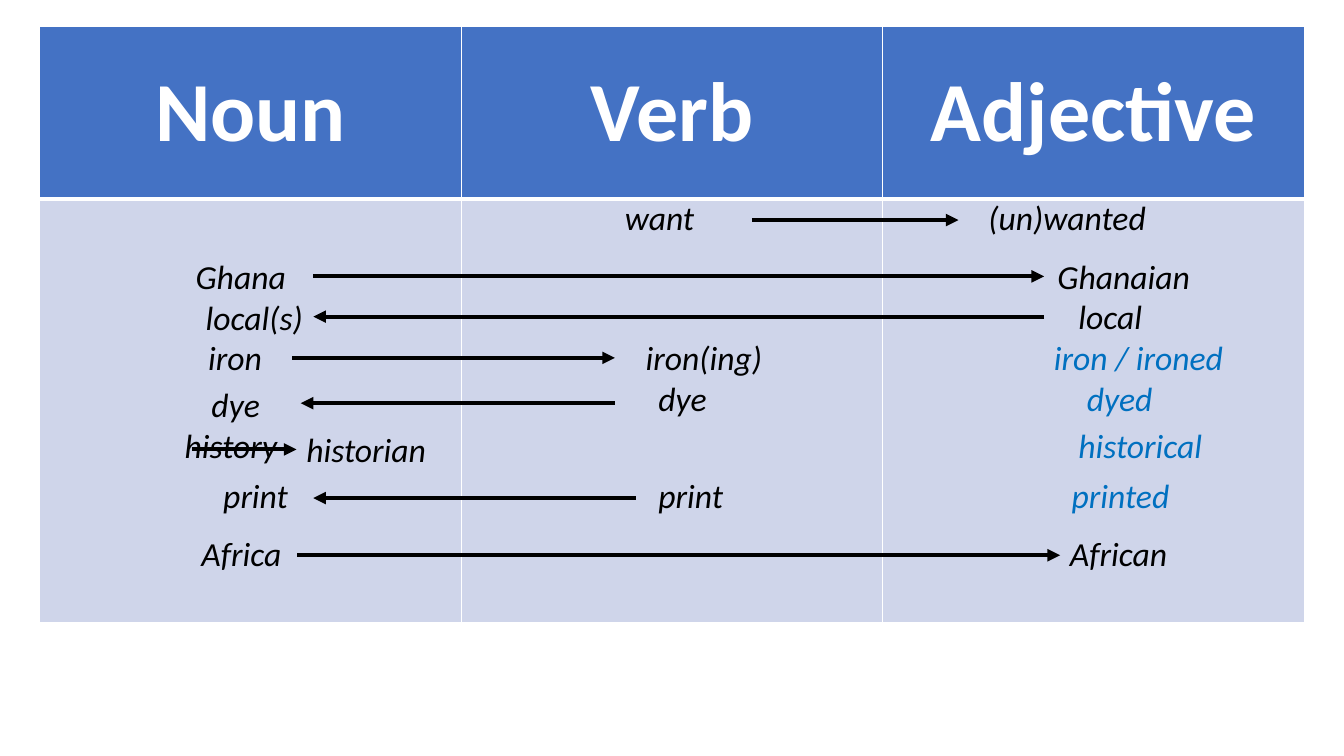
from lxml.etree import SubElement as Sub
from pptx import Presentation
from pptx.dml.color import RGBColor
from pptx.enum.shapes import MSO_CONNECTOR as Conn
from pptx.enum.text import MSO_ANCHOR as Anchor, MSO_AUTO_SIZE as Auto, PP_ALIGN as Align
from pptx.oxml.ns import qn
from pptx.util import Emu, Pt

BLACK = RGBColor(0x00, 0x00, 0x00)
WHITE = RGBColor(0xFF, 0xFF, 0xFF)
BLUE = RGBColor(0x44, 0x72, 0xC4)
PALE = RGBColor(0xCF, 0xD5, 0xEA)
AZURE = RGBColor(0x00, 0x70, 0xC0)

# The slide is a grid of 160 columns and 90 rows of square units
UNIT = 76200
COLS, ROWS = 160, 90
HIGH = 6
RIGHT, LEFT = 3, 1


def grid(*vals):
    return [Emu(round(val * UNIT)) for val in vals]


class Board:
    head = {"name": "Calibri", "size": Pt(60), "bold": True}
    word = {"name": "Calibri", "size": Pt(24), "italic": True}

    def __init__(self, deck):
        self.shapes = deck.slides.add_slide(deck.slide_layouts[6]).shapes

    def style(self, font, form, color):
        for key, val in form.items():
            setattr(font, key, val)
        font.color.rgb = color

    def edges(self, cell, base):
        props = cell._tc.get_or_add_tcPr()
        for side, wide in zip("LRTB", (1, 1, 1, base)):
            line = Sub(props, qn(f"a:ln{side}"), w=str(Pt(wide)))
            fill = Sub(line, qn("a:solidFill"))
            Sub(fill, qn("a:srgbClr"), val=str(WHITE))

    def table(self, heads, left, top, wide, highs):
        box = grid(left, top, wide * len(heads), sum(highs))
        table = self.shapes.add_table(len(highs), len(heads), *box).table
        for row, high in zip(table.rows, highs):
            row.height = grid(high)[0]
        for num, text in enumerate(heads):
            table.columns[num].width = grid(wide)[0]
            for row, (fill, base) in enumerate(((BLUE, 3), (PALE, 1))):
                cell = table.cell(row, num)
                self.edges(cell, base)
                cell.fill.solid()
                cell.fill.fore_color.rgb = fill
            cell = table.cell(0, num)
            cell.vertical_anchor = Anchor.MIDDLE
            para = cell.text_frame.paragraphs[0]
            para.alignment = Align.CENTER
            run = para.add_run()
            run.text = text
            self.style(run.font, self.head, WHITE)

    def label(self, text, left, top, wide, color=BLACK):
        box = self.shapes.add_textbox(*grid(left, top, wide, HIGH))
        frame = box.text_frame
        frame.word_wrap = False
        frame.auto_size = Auto.SHAPE_TO_FIT_TEXT
        run = frame.paragraphs[0].add_run()
        run.text = text
        self.style(run.font, self.word, color)
        return box

    def arrow(self, start, end, row, goal=None, side=None):
        link = self.shapes.add_connector(Conn.STRAIGHT, *grid(start, row, end, row))
        link.line.width = Pt(3)
        link.line.color.rgb = BLACK
        Sub(link.line._get_or_add_ln(), qn("a:tailEnd"), type="triangle")
        Sub(link._element.spPr, qn("a:effectLst"))
        if goal is not None:
            link.end_connect(goal, side)


def main():
    deck = Presentation()
    deck.slide_width, deck.slide_height = grid(COLS, ROWS)
    board = Board(deck)

    # Word classes
    board.table(("Noun", "Verb", "Adjective"), 4.7, 3.2, 50.2, (20.5, 50.4))

    # Words: text, left, top, width
    words = [
        ("want", 73.2, 22.9, 10.8),
        ("(un)wanted", 116.5, 22.9, 21.4),
        ("Ghana", 22.1, 29.9, 13.3),
        ("Ghanaian", 124.7, 29.9, 18.4),
        ("local(s)", 23.3, 34.7, 14),
        ("local", 127.2, 34.6, 10),
        ("iron", 23.6, 39.5, 9),
        ("iron(ing)", 75.7, 39.5, 16.3),
        ("dye", 77.2, 44.4, 8.4),
        ("dye", 24, 45.1, 8.4),
        ("history", 20.8, 50, 13.7),
        ("historian", 35.3, 50.5, 16.8),
        ("print", 25.4, 55.9, 10.3),
        ("print", 77.2, 55.9, 10.3),
        ("Africa", 22.8, 62.8, 12),
        ("African", 126.2, 62.8, 14),
    ]
    boxes = {word[0]: board.label(*word) for word in words}

    # Added adjectives
    for word in (
        ("iron / ironed", 124.3, 39.5, 22.8),
        ("dyed", 128.2, 44.4, 10.3),
        ("historical", 127.2, 50, 17.3),
        ("printed", 126.4, 55.9, 14.2),
    ):
        board.label(*word, AZURE)

    # Arrows: start, end, row, and the word and side they join
    for arrow in (
        (89.5, 114.1, 26.2),
        (37.3, 124.3, 32.9),
        (124.3, 37.3, 37.7, boxes["local(s)"], RIGHT),
        (34.8, 73.2, 42.6),
        (73.2, 35.8, 48),
        (75.7, 37.3, 59.3),
        (35.4, 126.2, 66.1),
        (22.8, 35.3, 53.5, boxes["historian"], LEFT),
    ):
        board.arrow(*arrow)

    deck.save("out.pptx")


if __name__ == "__main__":
    main()
